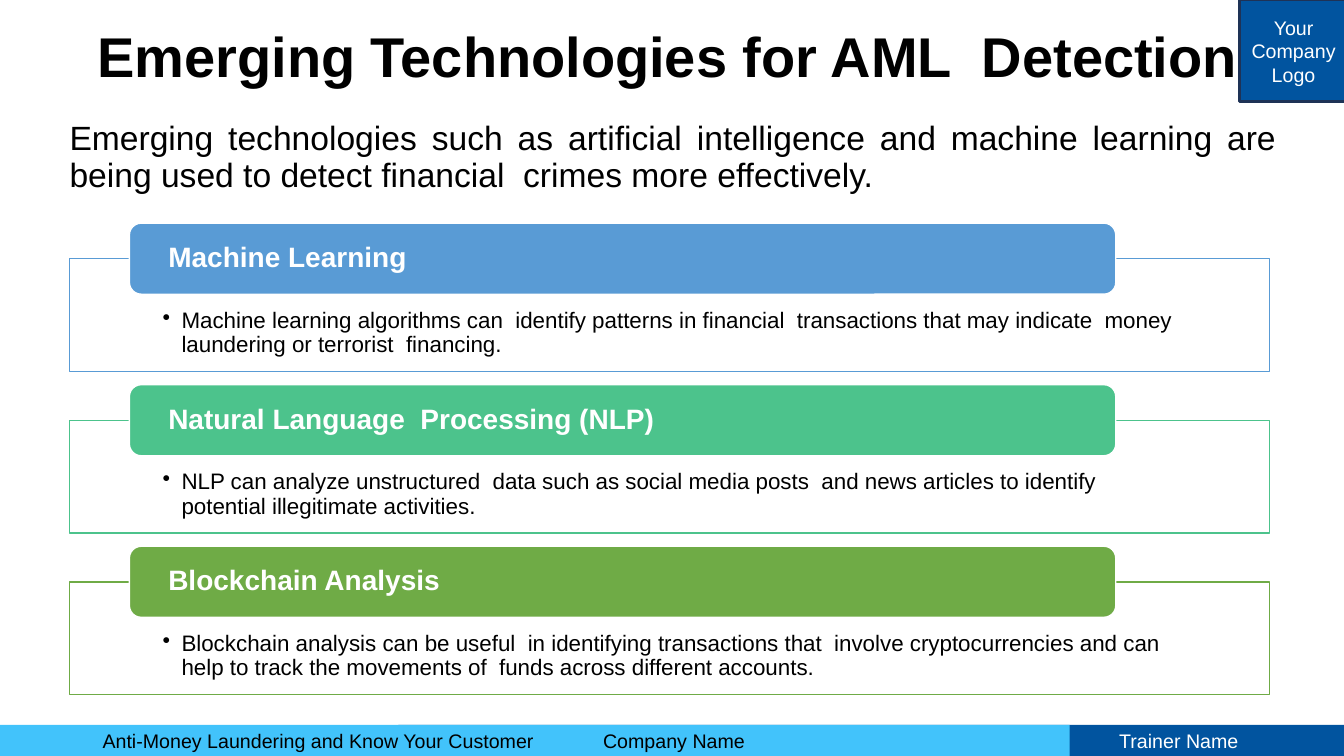
from lxml import etree
from pptx import Presentation
from pptx.dml.color import RGBColor
from pptx.enum.shapes import MSO_SHAPE
from pptx.enum.text import MSO_ANCHOR, PP_ALIGN
from pptx.oxml.ns import qn
from pptx.util import Pt

RECT, ROUND = MSO_SHAPE.RECTANGLE, MSO_SHAPE.ROUNDED_RECTANGLE
TOP, MIDDLE = MSO_ANCHOR.TOP, MSO_ANCHOR.MIDDLE
LEFT, CENTER, JUSTIFY = PP_ALIGN.LEFT, PP_ALIGN.CENTER, PP_ALIGN.JUSTIFY

COLORS = {
    "black": "000000", "white": "FFFFFF", "navy": "01549F", "edge": "1E3256",
    "sky": "42C3FB", "blue": "599BD5", "mint": "4CC38C", "green": "6FAB46",
}

prs = Presentation()
prs.slide_width, prs.slide_height = Pt(960), Pt(540)
slide = prs.slides.add_slide(prs.slide_layouts[6])


def add_box(kind, place, fill, line=None, width=1):
    box = slide.shapes.add_shape(kind, *map(Pt, place))
    box.shadow.inherit = False
    box.fill.solid()
    box.fill.fore_color.rgb = RGBColor.from_string(COLORS[fill])
    if line:
        box.line.color.rgb = RGBColor.from_string(COLORS[line])
        box.line.width = Pt(width)
    else:
        box.line.fill.background()
    return box


def write(box, text, size, color="black", bold=False, align=LEFT,
          anchor=TOP, pads=(7.2, 3.6, 7.2, 3.6), space=1.0, bullet=False):
    frame = box.text_frame
    frame.word_wrap = True
    frame.vertical_anchor = anchor
    frame.margin_left, frame.margin_top, frame.margin_right, frame.margin_bottom = map(Pt, pads)
    frame.text = text
    para = frame.paragraphs[0]
    if bullet:
        props = para._p.get_or_add_pPr()
        props.set("marL", str(Pt(13.5)))
        props.set("indent", str(-Pt(13.5)))
        tint = etree.SubElement(props, qn("a:buClr"))
        etree.SubElement(tint, qn("a:srgbClr"), val=COLORS["black"])
        etree.SubElement(props, qn("a:buChar"), char="•")
    para.alignment = align
    para.line_spacing = space
    font = para.runs[0].font
    font.name, font.size, font.bold = "Arial", Pt(size), bold
    font.color.rgb = RGBColor.from_string(COLORS[color])


# Footer bars and labels
add_box(RECT, (284.5, 517.7, 675.5, 22.3), "navy")
add_box(RECT, (0, 517.7, 764, 22.3), "sky")
labels = [
    ("Anti-Money Laundering and Know Your Customer", 66.2, 324, LEFT, "black"),
    ("Company Name", 393, 177, CENTER, "black"),
    ("Trainer Name", 792.3, 167, LEFT, "white"),
]
for text, left, width, align, color in labels:
    label = slide.shapes.add_textbox(Pt(left), Pt(517), Pt(width), Pt(24.2))
    write(label, text, 14, color, align=align)

# Logo box
logo = add_box(RECT, (885.3, 0, 77.5, 72.5), "navy", "edge", 2)
write(logo, "Your Company Logo", 14, "white", align=CENTER, anchor=MIDDLE)

# Title and introduction
title = slide.shapes.add_textbox(Pt(49.7), Pt(19.4), Pt(861), Pt(45.4))
write(title, "Emerging Technologies for AML  Detection", 40, bold=True,
      align=CENTER, anchor=MIDDLE, pads=(0, 3.6, 7.2, 3.6), space=0.9)
intro = slide.shapes.add_textbox(Pt(49.7), Pt(83.5), Pt(869), Pt(75))
write(intro, "Emerging technologies such as artificial intelligence and machine "
      "learning are being used to detect financial  crimes more effectively.",
      24, align=JUSTIFY, pads=(0, 3.6, 7.2, 3.6), space=0.9)

# Technology panels with heading tabs
topics = [
    ("Machine Learning", "blue",
     "Machine learning algorithms can  identify patterns in financial  transactions "
     "that may indicate  money laundering or terrorist  financing."),
    ("Natural Language  Processing (NLP)", "mint",
     "NLP can analyze unstructured  data such as social media posts  and news "
     "articles to identify  potential illegitimate activities."),
    ("Blockchain Analysis", "green",
     "Blockchain analysis can be useful  in identifying transactions that  involve "
     "cryptocurrencies and can  help to track the movements of  funds across "
     "different accounts."),
]
for i, (head, color, detail) in enumerate(topics):
    top = 159.4 + i * 115.4
    panel = add_box(RECT, (49.7, top + 25.4, 857.3, 80.6), "white", color)
    shade = panel.fill._xPr.find(qn("a:solidFill"))[0]
    etree.SubElement(shade, qn("a:alpha"), val="90000")
    write(panel, detail, 16, pads=(66.5, 36, 66.5, 8.6), space=0.9, bullet=True)
    tab = add_box(ROUND, (92.4, top, 704.6, 50.8), color, "white")
    tab.adjustments[0] = 0.167
    write(tab, head, 20, "white", bold=True, anchor=MIDDLE,
          pads=(25.3, 0, 25.3, 0), space=0.9)

prs.save("out.pptx")
